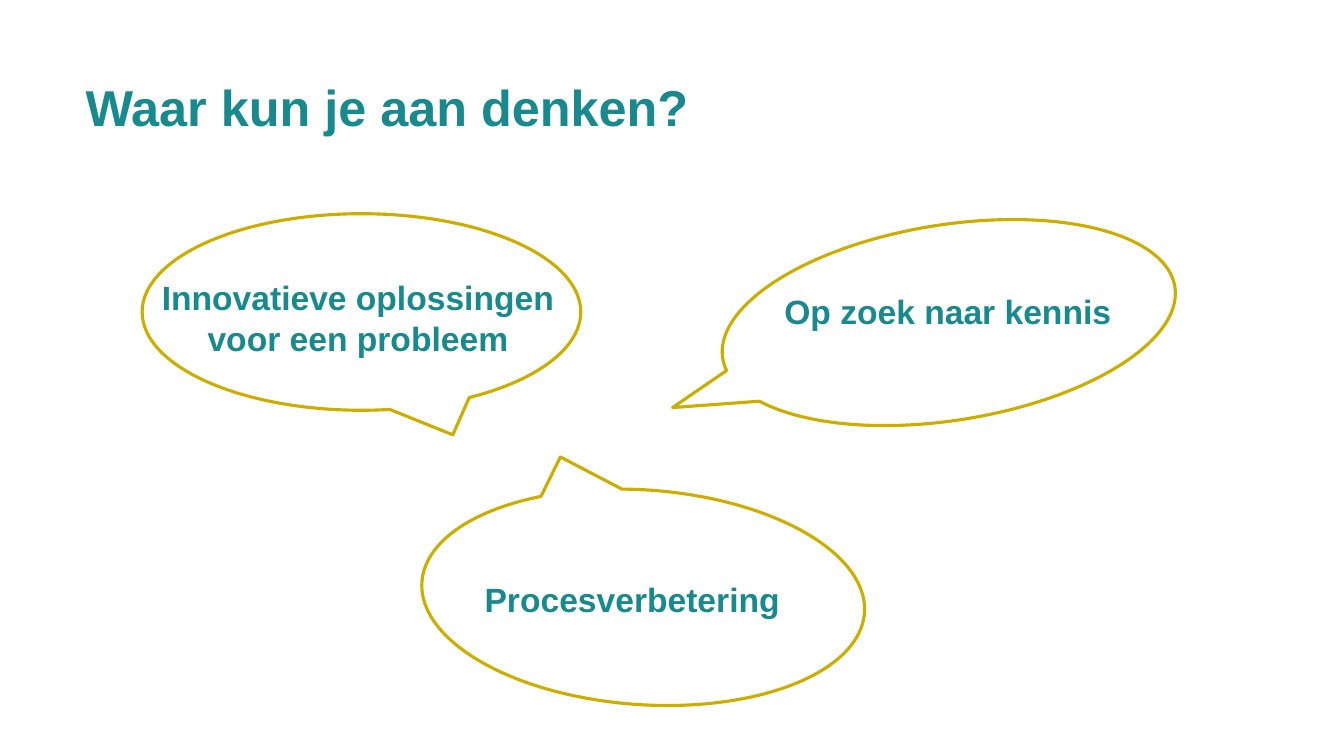
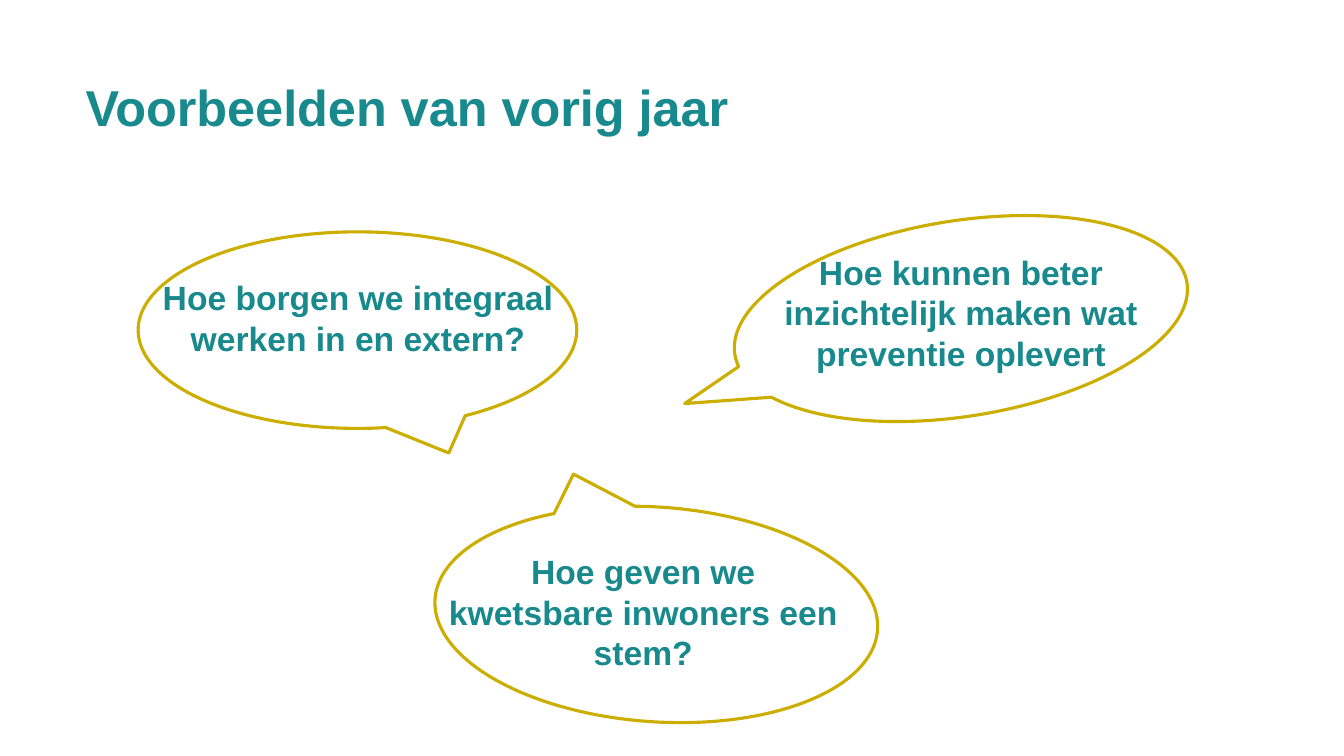
from dataclasses import dataclass

from pptx import Presentation
from pptx.dml.color import RGBColor
from pptx.enum.shapes import MSO_SHAPE as Shape
from pptx.enum.text import MSO_ANCHOR as Anchor, PP_ALIGN as Align
from pptx.util import Inches, Pt


@dataclass(frozen=True)
class Theme:
    background: RGBColor = RGBColor(0xFF, 0xFF, 0xFF)
    text: RGBColor = RGBColor(0x18, 0x89, 0x8C)
    outline: RGBColor = RGBColor(0xCC, 0xAE, 0x00)
    font: str = "Arial"
    title_size: int = 36
    body_size: int = 24
    outline_width: float = 2.25


# Size (width, height) and rotation of the bubbles: left, right, bottom
BUBBLES = [((4.35, 1.95), 0), ((1.94, 4.54), 81), ((4.4, 2.13), 184)]
LABEL_WIDTHS = [4.14, 3.88, 4.06]

# Per slide: title, then (text, line count, bubble corner, label corner)
SLIDES = [
    ("Waar kun je aan denken?", [
        ("Innovatieve oplossingen voor een probleem", 2, (1.41, 2.12), (1.48, 2.7)),
        ("Op zoek naar kennis", 1, (8.44, 0.93), (7.46, 2.84)),
        ("Procesverbetering", 1, (4.18, 4.86), (4.24, 5.69)),
    ]),
    ("Voorbeelden van vorig jaar", [
        ("Hoe borgen we integraal werken in en extern?", 2, (1.37, 2.3), (1.48, 2.7)),
        ("Hoe kunnen beter inzichtelijk maken wat preventie oplevert", 3,
         (8.56, 0.89), (7.59, 2.45)),
        ("Hoe geven we kwetsbare inwoners een stem?", 3, (4.31, 5.03), (4.35, 5.42)),
    ]),
]


class DeckBuilder:
    def __init__(self, theme):
        self.theme = theme
        self.deck = Presentation()
        self.deck.slide_width = Inches(13.33)
        self.deck.slide_height = Inches(7.5)
        self.page = None

    def add_page(self, title):
        self.page = self.deck.slides.add_slide(self.deck.slide_layouts[6])
        fill = self.page.background.fill
        fill.solid()
        fill.fore_color.rgb = self.theme.background
        self.add_text(title, (0.75, 0.63), (9.84, 0.92), size=self.theme.title_size,
                      anchor=Anchor.MIDDLE, line_spacing=0.9)

    def add_text(self, text, corner, extent, *, size, align=Align.LEFT,
                 anchor=Anchor.TOP, line_spacing=1.0):
        box = self.page.shapes.add_textbox(*map(Inches, corner + extent))
        frame = box.text_frame
        frame.word_wrap = True
        frame.vertical_anchor = anchor
        para = frame.paragraphs[0]
        para.alignment = align
        para.line_spacing = line_spacing
        span = para.add_run()
        span.text = text
        span.font.name = self.theme.font
        span.font.size = Pt(size)
        span.font.bold = True
        span.font.color.rgb = self.theme.text

    def add_label(self, text, corner, width, lines):
        height = 0.1 + 0.4 * lines
        self.add_text(text, corner, (width, height), size=self.theme.body_size,
                      align=Align.CENTER)

    def add_bubble(self, corner, extent, rotation):
        bubble = self.page.shapes.add_shape(Shape.OVAL_CALLOUT,
                                            *map(Inches, corner + extent))
        bubble.rotation = rotation
        bubble.shadow.inherit = False
        bubble.fill.background()
        bubble.line.color.rgb = self.theme.outline
        bubble.line.width = Pt(self.theme.outline_width)
        # Mirror the bubble so its tail points to the other side
        bubble._element.spPr.get_or_add_xfrm().set("flipH", "1")


def main():
    builder = DeckBuilder(Theme())
    for title, ideas in SLIDES:
        builder.add_page(title)
        for idea, (extent, rotation), width in zip(ideas, BUBBLES, LABEL_WIDTHS):
            text, lines, bubble_corner, label_corner = idea
            builder.add_bubble(bubble_corner, extent, rotation)
            builder.add_label(text, label_corner, width, lines)
    builder.deck.save("out.pptx")


if __name__ == "__main__":
    main()
